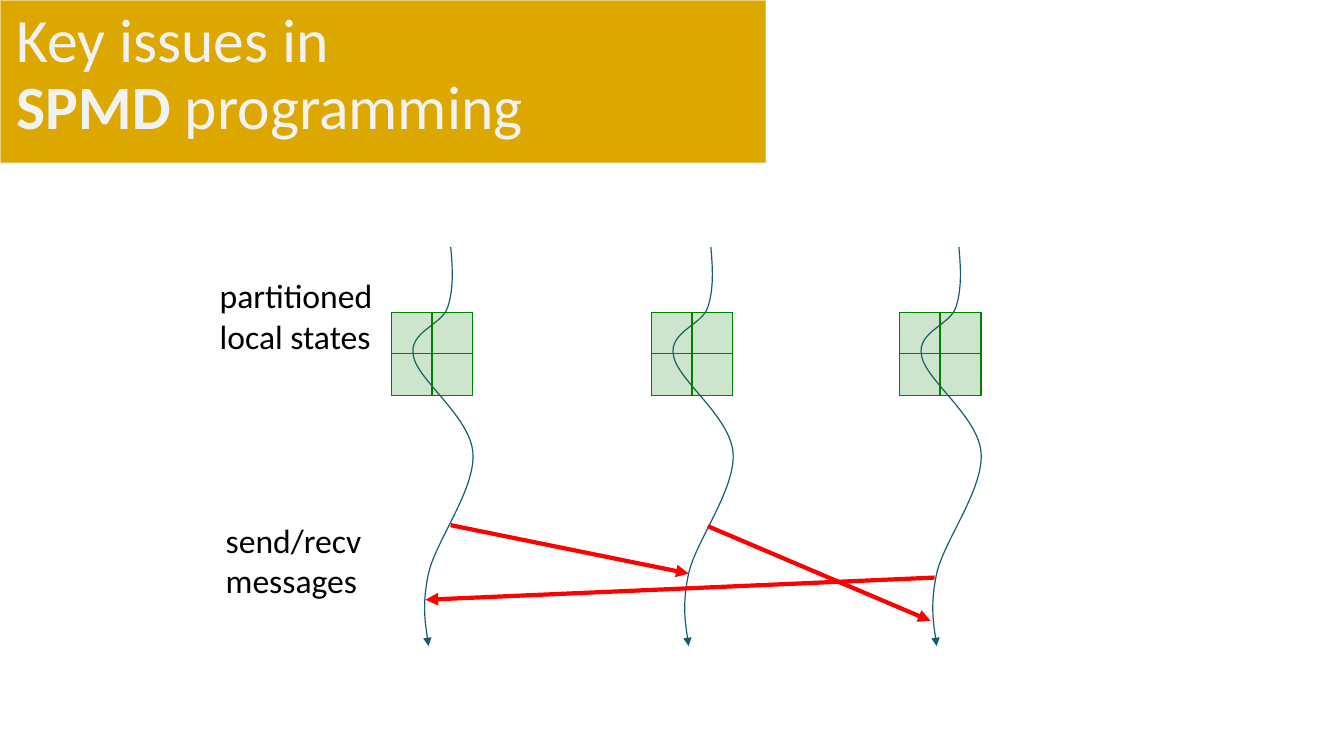
import dataclasses
import typing

import lxml.etree
import pptx
import pptx.dml.color
import pptx.enum.shapes
import pptx.enum.text
import pptx.oxml.ns
import pptx.util

PX = 9144  # EMU; 100 px to the inch
FONT = "Calibri"
COLOURS = {
    "band": "DCA800",
    "band_edge": "F9F9F9",
    "title": "F2F2F2",
    "text": "000000",
    "thread": "175B73",
    "state": "008000",
    "message": "FF0000",
}
Point = tuple[int, int]


@dataclasses.dataclass(frozen=True)
class Label:
    left: int
    top: int
    lines: tuple[str, ...]


@dataclasses.dataclass(frozen=True)
class Message:
    start: Point
    end: Point


LABELS = (
    Label(208, 268, ("partitioned", "local states")),
    Label(214, 511, ("send/recv", "messages")),
)
MESSAGES = (
    Message((447, 521), (683, 569)),
    Message((702, 522), (923, 616)),
    Message((927, 573), (422, 595)),
)
THREAD_SHIFTS = (0, 258, 504)
THREAD_START: Point = (447, 245)
# Each curve: two control points, then the point it reaches
THREAD_CURVES: tuple[tuple[Point, Point, Point], ...] = (
    ((449, 266), (450, 287), (444, 305)),
    ((438, 323), (405, 329), (410, 353)),
    ((414, 377), (466, 413), (469, 449)),
    ((472, 485), (432, 537), (425, 569)),
    ((418, 601), (425, 641), (425, 641)),
)
STATE_LEFT, STATE_TOP, STATE_SIZE = 388, 310, 41
STATE_STEP_X, STATE_STEP_Y = 40, 41


def emu(*lengths: int) -> list[pptx.util.Emu]:
    return [pptx.util.Emu(length * PX) for length in lengths]


def rgb(name: str) -> pptx.dml.color.RGBColor:
    return pptx.dml.color.RGBColor.from_string(COLOURS[name])


def add_child(parent: typing.Any, tag: str, **attributes: str) -> typing.Any:
    return lxml.etree.SubElement(parent, pptx.oxml.ns.qn(tag), attributes)


def set_line(shape: typing.Any, colour: str, points: float) -> typing.Any:
    """Format the outline and return its a:ln element."""
    shape.line.color.rgb = rgb(colour)
    shape.line.width = pptx.util.Pt(points)
    return shape.element.spPr.find(pptx.oxml.ns.qn("a:ln"))


def set_opacity(parent: typing.Any, percent: int) -> None:
    colour = next(parent.iter(pptx.oxml.ns.qn("a:srgbClr")))
    add_child(colour, "a:alpha", val=str(percent * 1000))


def add_box(page: typing.Any, kind: pptx.enum.shapes.MSO_SHAPE,
            area: tuple[int, int, int, int], fill: str) -> typing.Any:
    box = page.shapes.add_shape(kind, *emu(*area))
    box.shadow.inherit = False
    box.fill.solid()
    box.fill.fore_color.rgb = rgb(fill)
    return box


def add_title(page: typing.Any) -> None:
    title = page.shapes.title
    band = add_box(page, pptx.enum.shapes.MSO_SHAPE.FLOWCHART_PROCESS,
                   (0, 0, 760, 162), "band")
    set_opacity(set_line(band, "band_edge", 1.35), 50)
    title.element.addprevious(band.element)

    title.left, title.top, title.width, title.height = emu(6, 3, 751, 145)
    frame = title.text_frame
    frame.auto_size = pptx.enum.text.MSO_AUTO_SIZE.NONE
    frame.vertical_anchor = pptx.enum.text.MSO_ANCHOR.MIDDLE
    para = frame.paragraphs[0]
    para.alignment = pptx.enum.text.PP_ALIGN.LEFT
    para.line_spacing = 0.9
    para.add_run().text = "Key issues in"
    para.add_line_break()
    for text, bold in (("SPMD ", True), ("programming", False)):
        span = para.add_run()
        span.text = text
        span.font.bold = bold
    for span in para.runs:
        span.font.name = FONT
        span.font.size = pptx.util.Pt(44)
        span.font.color.rgb = rgb("title")


def add_label(page: typing.Any, label: Label) -> None:
    box = page.shapes.add_textbox(*emu(label.left, label.top, 179, 91))
    frame = box.text_frame
    frame.word_wrap = True
    frame.auto_size = pptx.enum.text.MSO_AUTO_SIZE.SHAPE_TO_FIT_TEXT
    frame.text = "\n".join(label.lines)
    for para in frame.paragraphs:
        para.font.name = FONT
        para.font.size = pptx.util.Pt(24)
        para.font.color.rgb = rgb("text")


def add_thread(page: typing.Any, shift: int) -> None:
    """Draw a wavy arrow, bending each straight segment into its curve."""
    anchors = [THREAD_START] + [curve[-1] for curve in THREAD_CURVES]
    left = min(x for x, _ in anchors)
    top = min(y for _, y in anchors)
    builder = page.shapes.build_freeform(
        THREAD_START[0] + shift, THREAD_START[1], scale=PX)
    builder.add_line_segments([(x + shift, y) for x, y in anchors[1:]], close=False)
    thread = builder.convert_to_shape()
    thread.shadow.inherit = False
    thread.fill.background()

    segments = list(thread.element.iter(pptx.oxml.ns.qn("a:lnTo")))
    for segment, curve in zip(segments, THREAD_CURVES):
        parent = segment.getparent()
        bend = add_child(parent, "a:cubicBezTo")
        for x, y in curve:
            add_child(bend, "a:pt", x=str(x - left), y=str(y - top))
        parent.replace(segment, bend)
    add_child(set_line(thread, "thread", 0.85), "a:tailEnd", type="triangle")


def add_states(page: typing.Any, shift: int) -> None:
    for row in range(2):
        for column in range(2):
            area = (STATE_LEFT + shift + column * STATE_STEP_X,
                    STATE_TOP + row * STATE_STEP_Y, STATE_SIZE, STATE_SIZE)
            state = add_box(page, pptx.enum.shapes.MSO_SHAPE.RECTANGLE, area, "state")
            set_opacity(state.element.spPr, 20)
            set_line(state, "state", 0.75)


def add_message(page: typing.Any, message: Message) -> None:
    arrow = page.shapes.add_connector(
        pptx.enum.shapes.MSO_CONNECTOR.STRAIGHT, *emu(*message.start, *message.end))
    add_child(set_line(arrow, "message", 3), "a:tailEnd", type="triangle")
    add_child(arrow.element.spPr, "a:effectLst")


def main() -> None:
    deck = pptx.Presentation()
    deck.slide_width, deck.slide_height = emu(1333, 750)
    page = deck.slides.add_slide(deck.slide_layouts.get_by_name("Title Only"))
    add_title(page)
    for shift in THREAD_SHIFTS:
        add_thread(page, shift)
        add_states(page, shift)
    for label in LABELS:
        add_label(page, label)
    for message in MESSAGES:
        add_message(page, message)
    deck.save("out.pptx")


if __name__ == "__main__":
    main()
